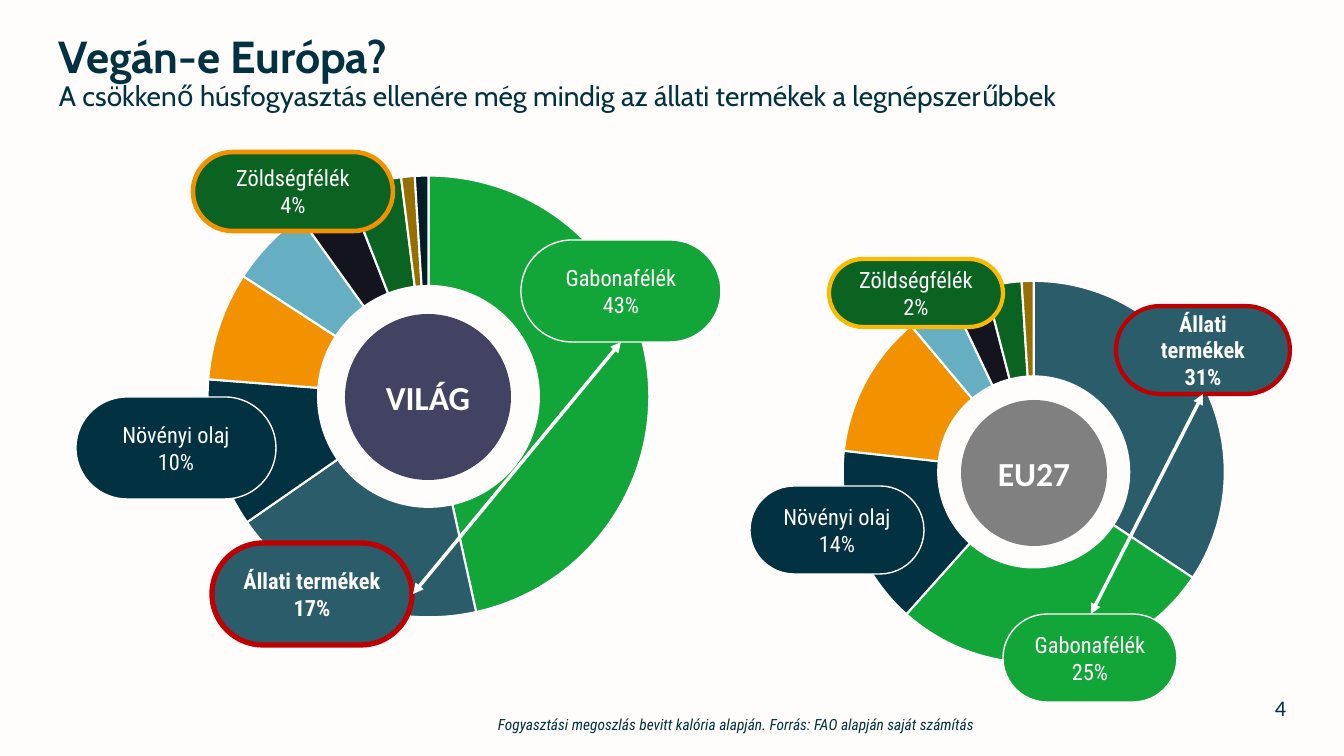
from lxml import etree
from pptx import Presentation
from pptx.chart.data import CategoryChartData
from pptx.dml.color import RGBColor
from pptx.enum.chart import XL_CHART_TYPE as ChartType
from pptx.enum.shapes import MSO_CONNECTOR as Connector, MSO_SHAPE as Shape
from pptx.enum.text import MSO_ANCHOR as Anchor, PP_ALIGN as Align
from pptx.oxml import parse_xml
from pptx.oxml.ns import nsdecls, qn
from pptx.util import Emu, Pt

NAVY, WHITE, GREEN, TEAL = "023142", "FFFFFF", "12A537", "2A5C6A"
ORANGE, LEAF, RED, YELLOW = "F39200", "0B6321", "C00000", "FBB900"
LATER_SLICES = [NAVY, ORANGE, "66AEC2", "14141E", LEAF, "976F00", "011D28"]


def px(length):
    return Emu(round(length * 914400 / 100.8))


def color(value):
    return RGBColor.from_string(value)


class SlideBuilder:
    heading_font, body_font, label_font = "Cabin", "Calibri", "Roboto Condensed"

    def __init__(self, presentation):
        self.slide = presentation.slides.add_slide(presentation.slide_layouts[6])
        self.shapes = self.slide.shapes

    def background(self, value):
        fill = self.slide.background.fill
        fill.solid()
        fill.fore_color.rgb = color(value)

    def run(self, paragraph, text, font_name, size, ink, bold=False, italic=False):
        run = paragraph.add_run()
        run.text = text
        font = run.font
        font.name, font.size, font.bold, font.italic = font_name, Pt(size), bold, italic
        font.color.rgb = color(ink)

    def text_box(self, box, lines, align=Align.LEFT, anchor=Anchor.TOP, wrap=True, spacing=1.0):
        """Each line is (text, font, size, bold, italic)."""
        frame = self.shapes.add_textbox(*map(px, box)).text_frame
        frame.word_wrap, frame.vertical_anchor = wrap, anchor
        for index, (text, font_name, size, bold, italic) in enumerate(lines):
            paragraph = frame.add_paragraph() if index else frame.paragraphs[0]
            paragraph.alignment, paragraph.line_spacing = align, spacing
            self.run(paragraph, text, font_name, size, NAVY, bold, italic)

    def label(self, preset, box, lines, fill, font_name, size, bold):
        shape = self.shapes.add_shape(preset, *map(px, box))
        shape.shadow.inherit = False
        shape.fill.solid()
        shape.fill.fore_color.rgb = color(fill)
        shape.line.fill.background()
        frame = shape.text_frame
        frame.word_wrap, frame.vertical_anchor = True, Anchor.MIDDLE
        for index, text in enumerate(lines):
            paragraph = frame.add_paragraph() if index else frame.paragraphs[0]
            paragraph.alignment = Align.CENTER
            self.run(paragraph, text, font_name, size, WHITE, bold)
        return shape

    def pill(self, box, lines, fill, border=WHITE, border_width=1, bold=False):
        shape = self.label(Shape.ROUNDED_RECTANGLE, box, lines, fill, self.label_font, 16, bold)
        shape.adjustments[0] = 0.5
        shape.line.color.rgb = color(border)
        shape.line.width = Pt(border_width)

    def hub(self, box, text, fill):
        self.label(Shape.OVAL, box, [text], fill, self.body_font, 24, True)

    def double_arrow(self, start, end):
        line = self.shapes.add_connector(Connector.STRAIGHT, *map(px, start + end))
        line.line.color.rgb = color(WHITE)
        line.line.width = Pt(2.5)
        outline = line.line._get_or_add_ln()
        for tag in ("a:headEnd", "a:tailEnd"):
            etree.SubElement(outline, qn(tag), type="triangle")
        etree.SubElement(line._element.spPr, qn("a:effectLst"))

    def doughnut(self, box, diameter, values, colors):
        data = CategoryChartData()
        data.categories = [str(number + 1) for number in range(len(values))]
        data.add_series("Series 1", values)
        chart = self.shapes.add_chart(ChartType.DOUGHNUT, *map(px, box), data).chart
        chart.has_legend = chart.has_title = False
        chart.font.name, chart.font.size = self.body_font, Pt(10)
        chart.font.color.rgb = color(NAVY)
        plot = chart.plots[0]
        plot.vary_by_categories = True
        plot._element.find(qn("c:holeSize")).set("val", "40")
        for index, value in enumerate(colors):
            slice_format = plot.series[0].points[index].format
            slice_format.fill.solid()
            slice_format.fill.fore_color.rgb = color(value)
            slice_format.line.color.rgb = color(WHITE)
            slice_format.line.width = Pt(1.5)
        self.center_plot(chart, diameter / box[2], diameter / box[3])

    def center_plot(self, chart, width, height):
        """Sizes the plot as shares of the chart frame."""
        area = chart._chartSpace.chart.plotArea
        for old_layout in area.findall(qn("c:layout")):
            area.remove(old_layout)
        places = {"x": (1 - width) / 2, "y": (1 - height) / 2, "w": width, "h": height}
        settings = '<c:layoutTarget val="inner"/><c:xMode val="edge"/><c:yMode val="edge"/>'
        settings += "".join(f'<c:{name} val="{share:.3f}"/>' for name, share in places.items())
        area.insert(0, parse_xml(
            f'<c:layout {nsdecls("c")}><c:manualLayout>{settings}</c:manualLayout></c:layout>'))


def main():
    presentation = Presentation()
    presentation.slide_width, presentation.slide_height = px(1344), px(756)
    builder = SlideBuilder(presentation)
    builder.background("FFFDFC")
    heading, body, label = builder.heading_font, builder.body_font, builder.label_font

    builder.text_box((1000, 688, 296, 40), [("4", body, 16, False, False)],
                     Align.RIGHT, Anchor.MIDDLE)
    builder.text_box((49, 18, 1154, 100), [
        ("Vegán-e Európa?", heading, 32, True, False),
        ("A csökkenő húsfogyasztás ellenére még mindig az állati termékek a legnépszerűbbek",
         heading, 20, False, False),
    ], anchor=Anchor.BOTTOM, spacing=0.9)

    builder.doughnut((134, 161, 589, 471), 442, [47, 19, 11, 8, 6, 4, 4, 1, 1],
                     [GREEN, TEAL] + LATER_SLICES)
    builder.pill((521, 240, 200, 102), ["Gabonafélék", "43%"], GREEN)
    builder.pill((212, 543, 200, 102), ["Állati termékek", "17%"], TEAL, RED, 3.75, True)
    builder.pill((193, 152, 200, 79), ["Zöldségfélék", "4%"], LEAF, ORANGE, 3.25)
    builder.pill((76, 397, 200, 102), ["Növényi olaj", "10%"], NAVY)
    builder.hub((345, 314, 166, 166), "VILÁG", "424263")
    builder.double_arrow((621, 342), (413, 594))

    builder.doughnut((777, 267, 513, 410), 382, [34, 27, 15, 12, 4, 3, 3, 1, 0],
                     [TEAL, GREEN] + LATER_SLICES)
    builder.hub((961, 400, 146, 146), "EU27", "808080")
    builder.pill((1116, 306, 174, 88), ["Állati termékek", "31%"], TEAL, RED, 3, True)
    builder.pill((1003, 614, 174, 88), ["Gabonafélék", "25%"], GREEN)
    builder.pill((829, 259, 174, 68), ["Zöldségfélék", "2%"], LEAF, YELLOW, 3)
    builder.pill((750, 486, 174, 88), ["Növényi olaj", "14%"], NAVY)
    builder.double_arrow((1203, 394), (1091, 614))

    builder.text_box((488, 710, 510, 29), [
        ("Fogyasztási megoszlás bevitt kalória alapján. Forrás: FAO alapján saját számítás",
         label, 11, False, True)], wrap=False)
    presentation.save("out.pptx")


if __name__ == "__main__":
    main()
